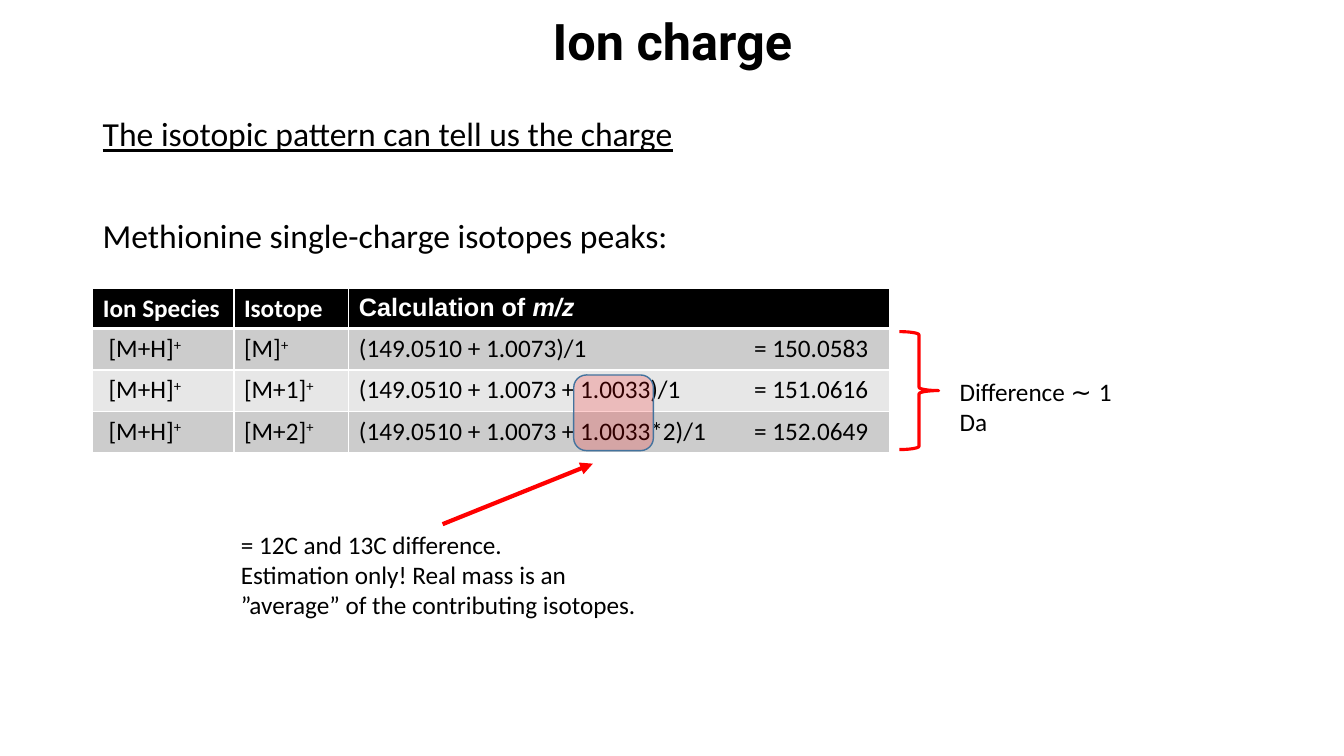
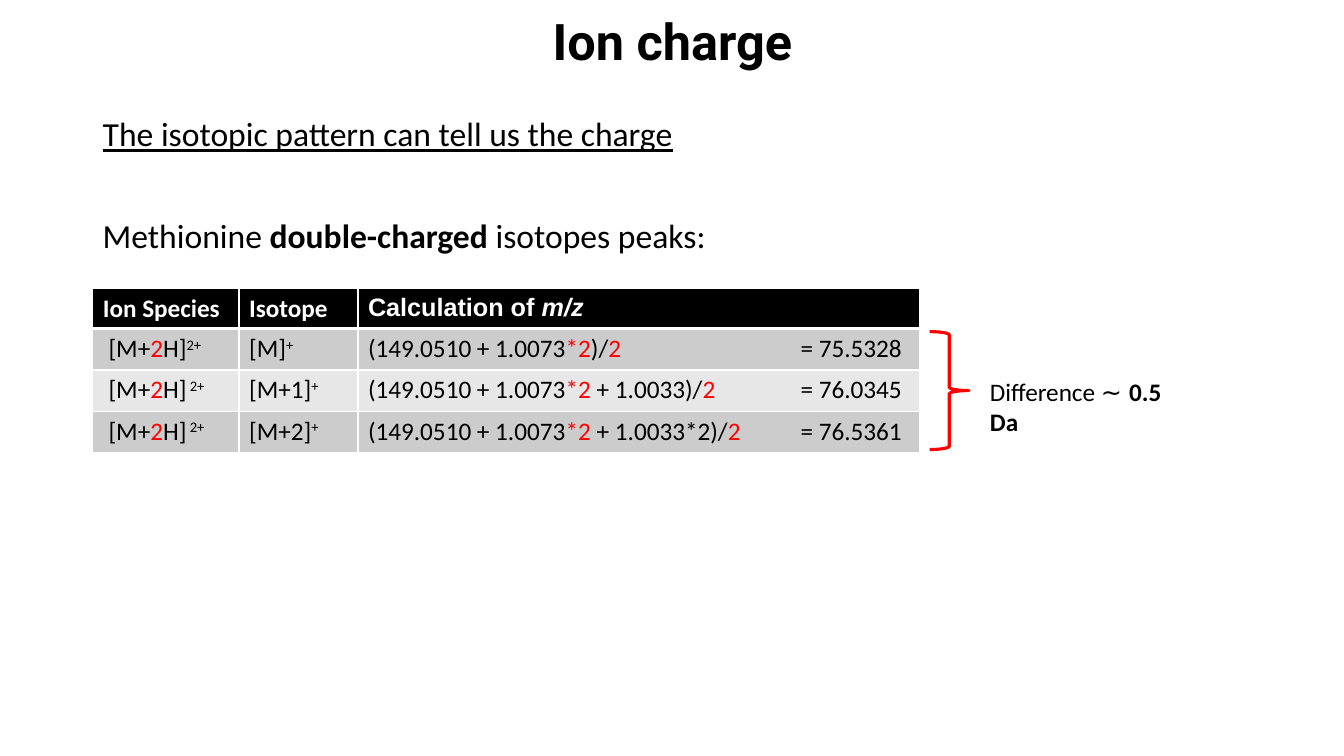
"""Two slides on reading the ion charge from the isotopic pattern."""
from lxml.etree import SubElement
from pptx import Presentation
from pptx.dml.color import RGBColor
from pptx.enum.shapes import MSO_CONNECTOR, MSO_SHAPE
from pptx.enum.text import MSO_ANCHOR, PP_ALIGN
from pptx.oxml.ns import qn
from pptx.util import Inches, Pt

BLACK = RGBColor(0x00, 0x00, 0x00)
WHITE = RGBColor(0xFF, 0xFF, 0xFF)
RED = RGBColor(0xFF, 0x00, 0x00)
BLUE = RGBColor(0x43, 0x73, 0x9E)
BANDS = RGBColor(0xCC, 0xCC, 0xCC), RGBColor(0xE7, 0xE7, 0xE7)

LEFT, TABLE_TOP = 0.92, 2.86
HEAD_H, ROW_H = 0.4, 0.41
BODY_SIZE, SMALL_SIZE = 24, 18

TITLE = "Ion charge"
SUBTITLE = ("The isotopic pattern can tell us the charge", "u")
HEADER = (
    [("Ion Species", "b")],
    [("Isotope", "b")],
    [("Calculation of ", "ba"), ("m/z", "bai")],
)
ISOTOPES = [[(name, ""), ("+", "^")] for name in ("[M]", "[M+1]", "[M+2]")]
TWO, TIMES_TWO = ("2", "r"), ("*2", "r")
MASS = ("(149.0510 + 1.0073", "")

SINGLE = {
    "lead": [("Methionine single-charge isotopes peaks:", "")],
    "cols": (1.4, 1.14, 5.36),
    "tab": 3.92,
    "species": [[(" [M+H]", ""), ("+", "^")]] * 3,
    "sums": [
        [("(149.0510 + 1.0073)/1\t= 150.0583", "")],
        [("(149.0510 + 1.0073 + 1.0033)/1\t= 151.0616", "")],
        [("(149.0510 + 1.0073 + 1.0033*2)/1\t= 152.0649", "")],
    ],
    "gap": [("Difference ", ""), ("∼ ", "a"), ("1 Da", "")],
    "gap_w": 1.9,
}
DOUBLE = {
    "lead": [("Methionine ", ""), ("double-charged", "b"), (" isotopes peaks:", "")],
    "cols": (1.45, 1.18, 5.57),
    "tab": 4.29,
    "species": [[(" [M+", ""), TWO, ("H]", ""), (charge, "^")]
                for charge in ("2+", " 2+", " 2+")],
    "sums": [
        [MASS, TIMES_TWO, (")/", ""), TWO, ("\t= 75.5328", "")],
        [MASS, TIMES_TWO, (" + 1.0033)/", ""), TWO, ("\t= 76.0345", "")],
        [MASS, TIMES_TWO, (" + 1.0033*2)/", ""), TWO, ("\t= 76.5361", "")],
    ],
    "gap": [("Difference ", ""), ("∼ ", "a"), ("0.5 Da", "b")],
    "gap_w": 2.1,
}
NOTE = (
    "= 12C and 13C difference.",
    "Estimation only! Real mass is an ”average” of the contributing isotopes.",
)


def add_runs(p, runs, size=SMALL_SIZE, color=BLACK, font="Calibri"):
    """Add runs styled by flags: b, i, u, a (Arial), r (red), ^ (superscript)."""
    for text, flags in runs:
        r = p.add_run()
        r.text = text
        f = r.font
        f.size, f.name = Pt(size), "Arial" if "a" in flags else font
        f.bold, f.italic, f.underline = ("b" in flags, "i" in flags, "u" in flags)
        f.color.rgb = RED if "r" in flags else color
        if "^" in flags:
            r._r.get_or_add_rPr().set("baseline", "30000")


def add_text(s, at, paragraphs, **style):
    """Add a wrapping text box with one paragraph per list of runs."""
    tf = s.shapes.add_textbox(*map(Inches, at)).text_frame
    tf.word_wrap = True
    for i, runs in enumerate(paragraphs):
        p = tf.add_paragraph() if i else tf.paragraphs[0]
        add_runs(p, runs, **style)
    return tf


def set_borders(cell, row):
    """Draw white cell borders, heavier under the header."""
    widths = {"L": 1, "R": 1, "T": 3 if row == 1 else 1, "B": 1 if row else 3}
    for side, width in widths.items():
        ln = SubElement(cell._tc.get_or_add_tcPr(), qn(f"a:ln{side}"), w=str(Pt(width)))
        fill = SubElement(ln, qn("a:solidFill"))
        SubElement(fill, qn("a:srgbClr"), val=str(WHITE))


def add_ion_table(s, data):
    """Add the table of ion species, isotopes and sums."""
    rows = [HEADER, *zip(data["species"], ISOTOPES, data["sums"])]
    heights = [HEAD_H] + [ROW_H] * len(ISOTOPES)
    size = map(Inches, (LEFT, TABLE_TOP, sum(data["cols"]), sum(heights)))
    table = s.shapes.add_table(len(rows), len(HEADER), *size).table
    for col, width in zip(table.columns, data["cols"]):
        col.width = Inches(width)
    for i, (row, height) in enumerate(zip(rows, heights)):
        table.rows[i].height = Inches(height)
        for j, runs in enumerate(row):
            cell = table.cell(i, j)
            set_borders(cell, i)
            cell.fill.solid()
            cell.fill.fore_color.rgb = BANDS[(i - 1) % 2] if i else BLACK
            p = cell.text_frame.paragraphs[0]
            add_runs(p, runs, color=BLACK if i else WHITE)
            if i and j == 2:
                tabs = SubElement(p._p.get_or_add_pPr(), qn("a:tabLst"))
                SubElement(tabs, qn("a:tab"), pos=str(Inches(data["tab"])), algn="l")


def add_outline(s, kind, at, color, width):
    """Add an unfilled preset shape."""
    sp = s.shapes.add_shape(kind, *map(Inches, at))
    sp.shadow.inherit = False
    sp.fill.background()
    sp.line.color.rgb, sp.line.width = color, Pt(width)
    return sp


def add_ion_slide(prs, data):
    """Add title, lead text, table and braced difference."""
    s = prs.slides.add_slide(prs.slide_layouts[6])
    tf = add_text(s, (LEFT, 0.11, 11.5, 0.66), [[(TITLE, "b")]], size=36, font="Roboto")
    tf.vertical_anchor = MSO_ANCHOR.MIDDLE
    tf.paragraphs[0].alignment = PP_ALIGN.CENTER
    tf.paragraphs[0].line_spacing = 0.9
    tf = add_text(s, (LEFT, 1.12, 12.41, 1.6), [[SUBTITLE], data["lead"]], size=BODY_SIZE)
    for p, before in zip(tf.paragraphs, (10, 46.4)):
        p.line_spacing, p.space_before = 0.9, Pt(before)
    add_ion_table(s, data)
    brace_left = LEFT + sum(data["cols"]) + 0.1
    add_outline(s, MSO_SHAPE.RIGHT_BRACE, (brace_left, 3.29, 0.39, 1.17), RED, 2.25)
    add_text(s, (brace_left + 0.5, 3.68, data["gap_w"], 0.7), [data["gap"]])
    return s


def add_mass_note(s):
    """Mark the isotope mass difference and explain it."""
    sp = add_outline(s, MSO_SHAPE.ROUNDED_RECTANGLE, (5.69, 3.72, 0.79, 0.75), BLUE, 1)
    sp.fill.solid()
    sp.fill.fore_color.rgb = RED
    color = sp._element.spPr.find(qn("a:solidFill"))[0]
    SubElement(color, qn("a:alpha"), val="19000")
    add_text(s, (2.29, 5.2, 4.2, 1.01), [[(line, "")] for line in NOTE])
    ends = map(Inches, (4.39, 5.2, 5.88, 4.6))
    arrow = s.shapes.add_connector(MSO_CONNECTOR.STRAIGHT, *ends)
    arrow.line.color.rgb, arrow.line.width = RED, Pt(3)
    SubElement(arrow.line._get_or_add_ln(), qn("a:tailEnd"), type="triangle")
    SubElement(arrow._element.spPr, qn("a:effectLst"))


def main():
    """Build and save the slides."""
    prs = Presentation()
    prs.slide_width, prs.slide_height = Inches(13.33), Inches(7.5)
    add_mass_note(add_ion_slide(prs, SINGLE))
    add_ion_slide(prs, DOUBLE)
    prs.save("out.pptx")


if __name__ == "__main__":
    main()
